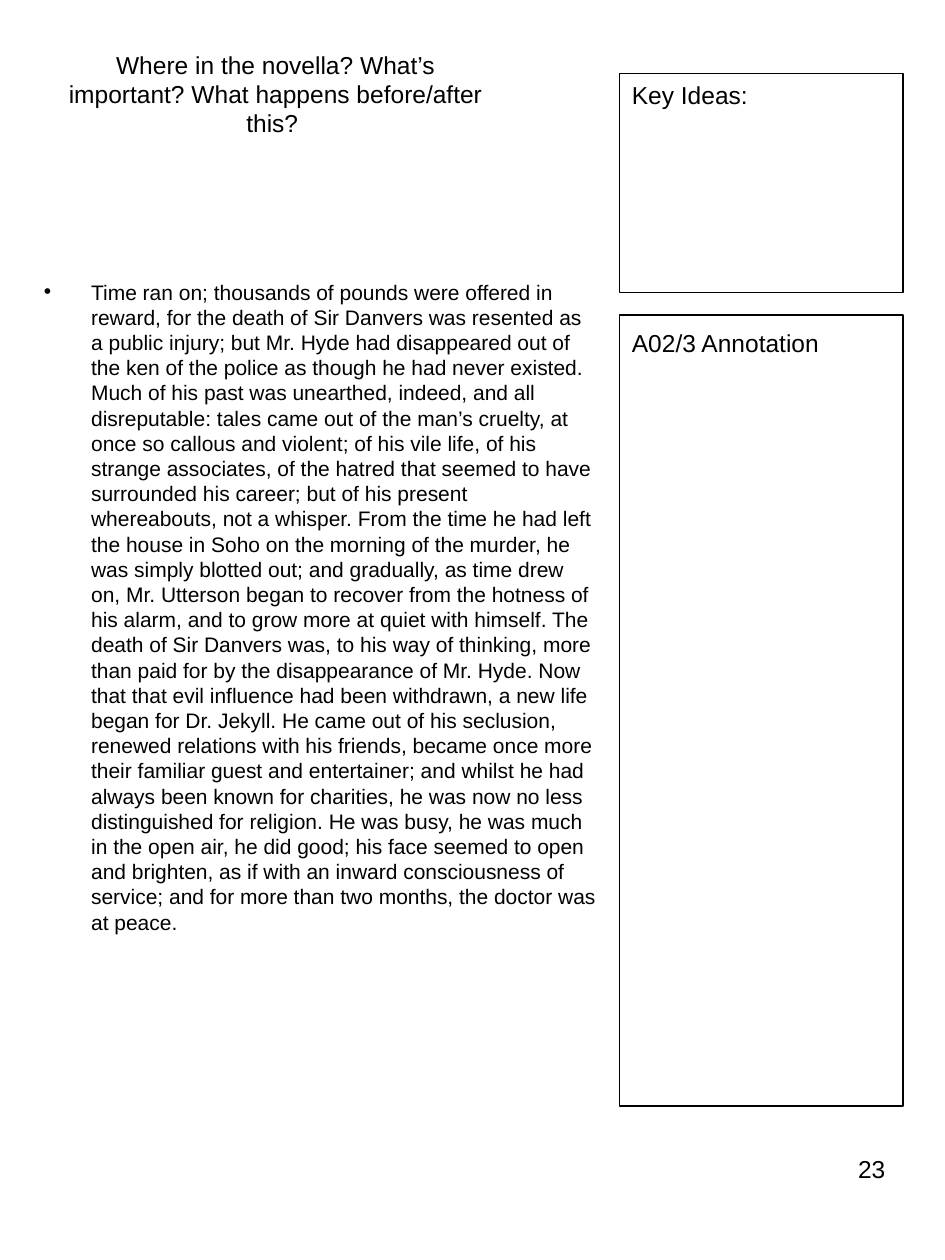
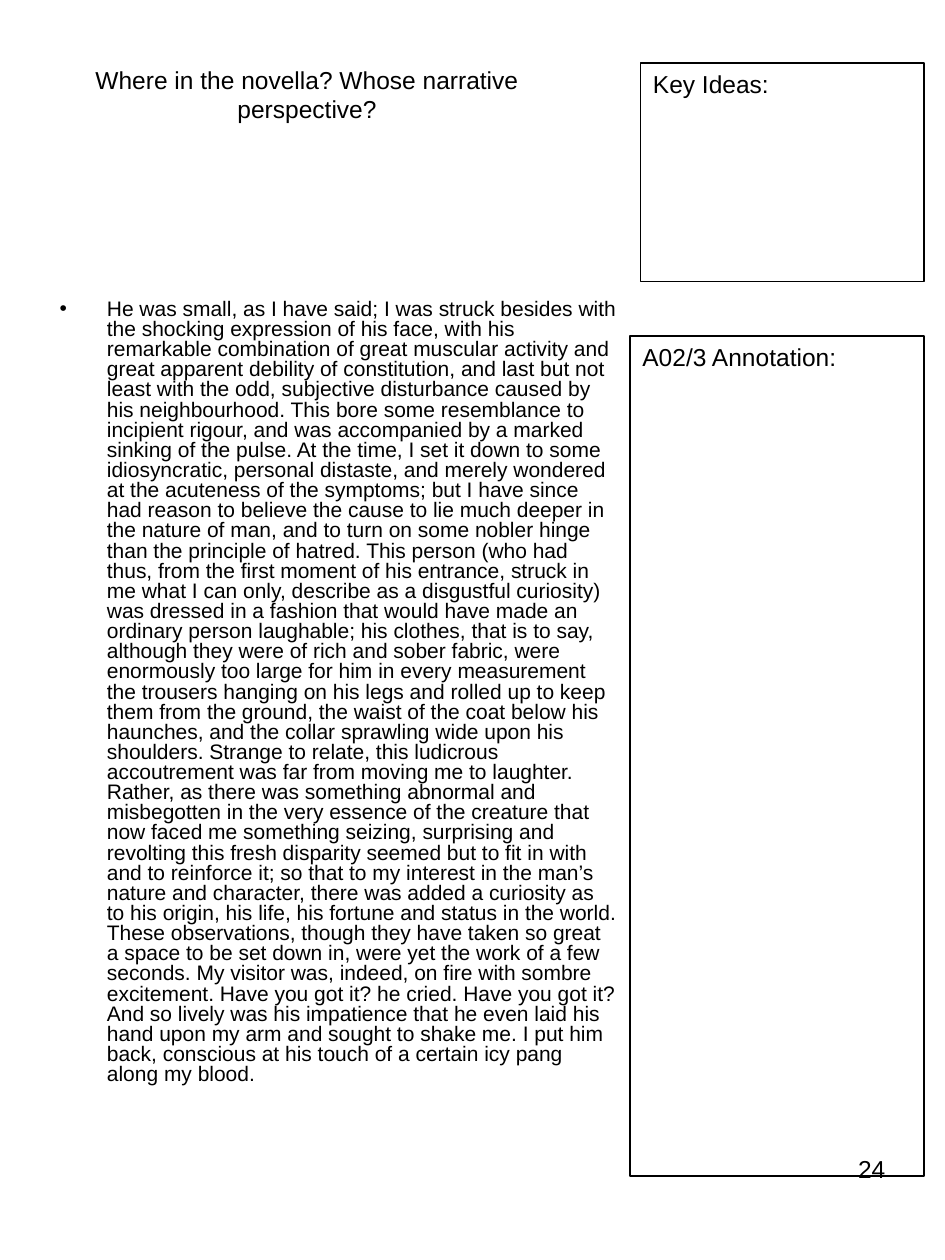
"""Builds two extract-annotation pages for a novella study booklet."""
from lxml import etree
from pptx import Presentation
from pptx.dml.color import RGBColor
from pptx.enum import shapes, text
from pptx.oxml import ns
from pptx.util import Pt

BLACK = RGBColor(0, 0, 0)
WHITE = RGBColor(255, 255, 255)
FONT = "Arial"
LABEL_SIZE, EXTRACT_SIZE = 14, 12
HANGING_INDENT = 27
NUMBER_FRAME = (387, 656, 126, 50)

PAGES = [
    {
        "number": "23",
        "title": ("Where in the novella? What’s important? What happens before/after this? ",
                  (27, 29, 261, 49)),
        "extract": ([
            "Time ran on; thousands of pounds were offered in reward, for the death of Sir Danvers",
            "was resented as a public injury; but Mr. Hyde had disappeared out of the ken of the",
            "police as though he had never existed. Much of his past was unearthed, indeed, and all",
            "disreputable: tales came out of the man’s cruelty, at once so callous and violent; of",
            "his vile life, of his strange associates, of the hatred that seemed to have surrounded",
            "his career; but of his present whereabouts, not a whisper. From the time he had left",
            "the house in Soho on the morning of the murder, he was simply blotted out; and",
            "gradually, as time drew on, Mr. Utterson began to recover from the hotness of his",
            "alarm, and to grow more at quiet with himself. The death of Sir Danvers was, to his",
            "way of thinking, more than paid for by the disappearance of Mr. Hyde. Now that that",
            "evil influence had been withdrawn, a new life began for Dr. Jekyll. He came out of his",
            "seclusion, renewed relations with his friends, became once more their familiar guest",
            "and entertainer; and whilst he had always been known for charities, he was now no less",
            "distinguished for religion. He was busy, he was much in the open air, he did good; his",
            "face seemed to open and brighten, as if with an inward consciousness of service; and",
            "for more than two months, the doctor was at peace.",
        ], (18, 156, 330, 487)),
        "line_spacing": 1.0,
        "notes": [
            ([("Key Ideas:", LABEL_SIZE)], (354, 42, 162, 125)),
            ([("A02/3 Annotation", LABEL_SIZE), (" ", 18)], (354, 180, 162, 452)),
        ],
    },
    {
        "number": "24",
        "title": ("Where in the novella? Whose narrative perspective?", (30, 30, 291, 48)),
        "extract": ([
            "He was small, as I have said; I was struck besides with the shocking expression of his",
            "face, with his remarkable combination of great muscular activity and great apparent",
            "debility of constitution, and last but not least with the odd, subjective disturbance",
            "caused by his neighbourhood. This bore some resemblance to incipient rigour, and was",
            "accompanied by a marked sinking of the pulse. At the time, I set it down to some",
            "idiosyncratic, personal distaste, and merely wondered at the acuteness of the",
            "symptoms; but I have since had reason to believe the cause to lie much deeper in the",
            "nature of man, and to turn on some nobler hinge than the principle of hatred. This",
            "person (who had thus, from the first moment of his entrance, struck in me what I can",
            "only, describe as a disgustful curiosity) was dressed in a fashion that would have",
            "made an ordinary person laughable; his clothes, that is to say, although they were of",
            "rich and sober fabric, were enormously too large for him in every measurement the",
            "trousers hanging on his legs and rolled up to keep them from the ground, the waist of",
            "the coat below his haunches, and the collar sprawling wide upon his shoulders. Strange",
            "to relate, this ludicrous accoutrement was far from moving me to laughter. Rather, as",
            "there was something abnormal and misbegotten in the very essence of the creature that",
            "now faced me something seizing, surprising and revolting this fresh disparity seemed",
            "but to fit in with and to reinforce it; so that to my interest in the man’s nature and",
            "character, there was added a curiosity as to his origin, his life, his fortune and",
            "status in the world. These observations, though they have taken so great a space to be",
            "set down in, were yet the work of a few seconds. My visitor was, indeed, on fire with",
            "sombre excitement. Have you got it? he cried. Have you got it? And so lively was his",
            "impatience that he even laid his hand upon my arm and sought to shake me. I put him",
            "back, conscious at his touch of a certain icy pang along my blood.",
        ], (27, 168, 333, 475)),
        "line_spacing": 0.8,
        "notes": [
            ([("Key Ideas:", LABEL_SIZE)], (366, 36, 162, 125)),
            ([("A02/3 Annotation:", LABEL_SIZE)], (360, 192, 168, 480)),
        ],
    },
]


def apply(target, formats):
    for name, value in formats.items():
        setattr(target, name, value)


def write(box, spans, anchor=text.MSO_ANCHOR.TOP, **para_formats):
    frame = box.text_frame
    apply(frame, {"word_wrap": True, "auto_size": text.MSO_AUTO_SIZE.NONE,
                  "vertical_anchor": anchor})
    para = frame.paragraphs[0]
    apply(para, {"alignment": text.PP_ALIGN.LEFT, **para_formats})
    for words, size in spans:
        span = para.add_run()
        span.text = words
        apply(span.font, {"name": FONT, "size": Pt(size)})
        span.font.color.rgb = BLACK
    return para


def add_bullet(para):
    properties = para._p.get_or_add_pPr()
    properties.set("marL", str(Pt(HANGING_INDENT)))
    properties.set("indent", str(-Pt(HANGING_INDENT)))
    etree.SubElement(properties, ns.qn("a:buFont"), typeface=FONT)
    etree.SubElement(properties, ns.qn("a:buChar"), char="•")


def add_text(page, frame):
    return page.shapes.add_textbox(*map(Pt, frame))


def add_note_box(page, spans, frame):
    box = page.shapes.add_shape(shapes.MSO_SHAPE.RECTANGLE, *map(Pt, frame))
    box.shadow.inherit = False
    box.fill.background()
    box.line.color.rgb = BLACK
    box.line.width = Pt(0.75)
    write(box, spans)


def build_page(deck, content):
    page = deck.slides.add_slide(deck.slide_layouts[5])
    page.background.fill.solid()
    page.background.fill.fore_color.rgb = WHITE

    words, frame = content["title"]
    title = page.shapes.title
    apply(title, dict(zip(("left", "top", "width", "height"), map(Pt, frame))))
    write(title, [(words, LABEL_SIZE)], text.MSO_ANCHOR.MIDDLE,
          alignment=text.PP_ALIGN.CENTER)

    write(add_text(page, NUMBER_FRAME), [(content["number"], LABEL_SIZE)],
          alignment=text.PP_ALIGN.RIGHT)

    lines, frame = content["extract"]
    add_bullet(write(add_text(page, frame), [(" ".join(lines), EXTRACT_SIZE)],
                     line_spacing=content["line_spacing"]))

    for spans, frame in content["notes"]:
        add_note_box(page, spans, frame)


def main():
    deck = Presentation()
    apply(deck, {"slide_width": Pt(540), "slide_height": Pt(720)})
    for content in PAGES:
        build_page(deck, content)
    deck.save("out.pptx")


if __name__ == "__main__":
    main()
